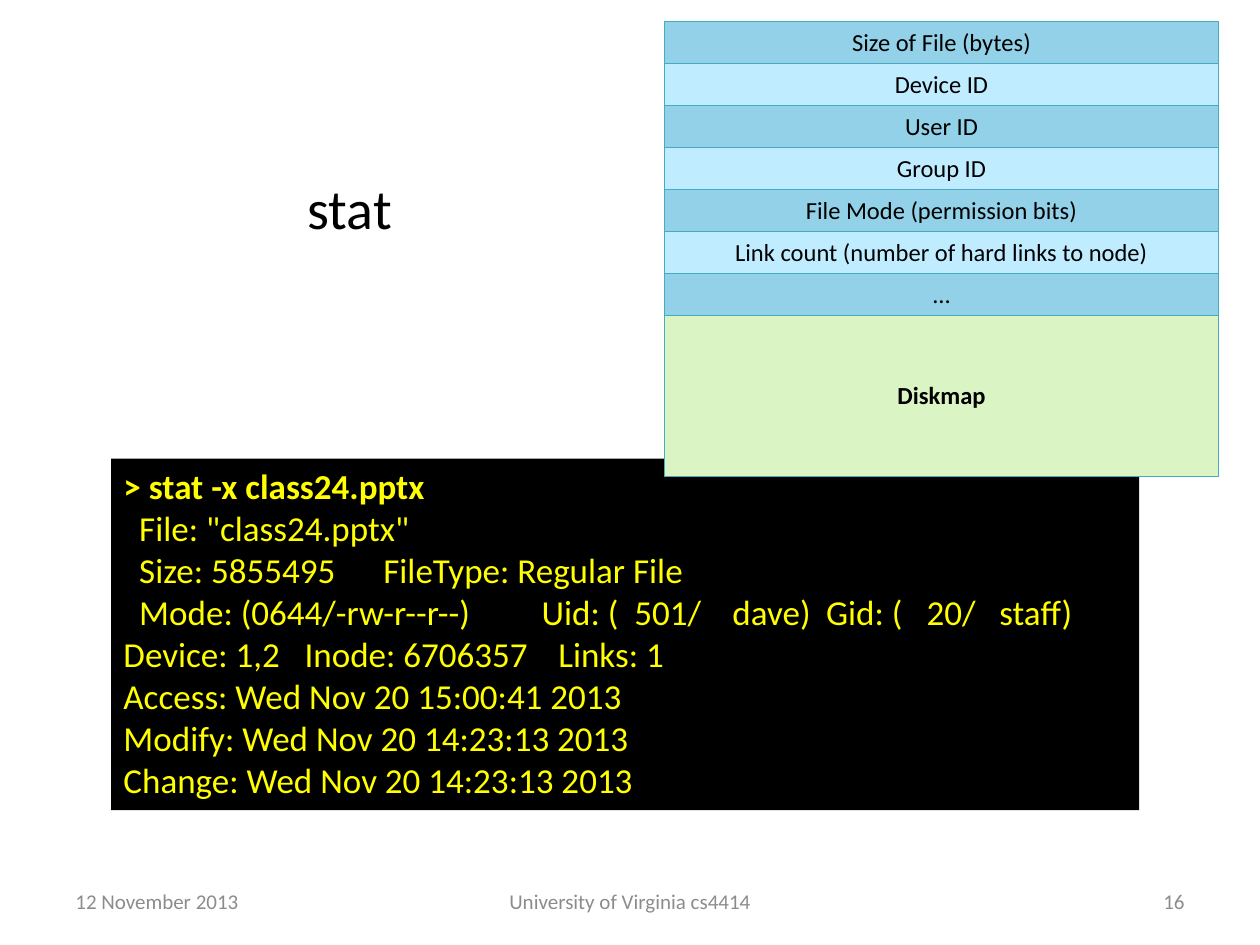
"""Build the slide that sets an inode's fields beside the output of stat."""
from dataclasses import dataclass

from lxml import etree
from pptx import Presentation
from pptx import util as u
from pptx.dml.color import RGBColor
from pptx.enum import text
from pptx.oxml import ns

Pt = u.Pt
ALIGN = text.PP_ALIGN
MIDDLE = text.MSO_ANCHOR.MIDDLE


@dataclass(frozen=True)
class Theme:
    font: str = "Calibri"
    ink: str = "000000"
    muted: str = "8C8C8C"
    terminal: str = "000000"
    output: str = "FFFF00"
    bands: tuple = ("92D1E8", "C0ECFF")
    diskmap: str = "DAF4C3"
    border: str = "46AAC5"
    title_size: int = 32
    output_size: int = 20
    field_size: int = 14
    footer_size: int = 12


THEME = Theme()

FIELDS = [
    "Size of File (bytes)",
    "Device ID",
    "User ID",
    "Group ID",
    "File Mode (permission bits)",
    "Link count (number of hard links to node)",
    "…",
]

INDENT = 9
STAT_OUTPUT = [
    ("> stat -x class24.pptx", ()),
    ("\tFile: \"class24.pptx\"", (INDENT,)),
    ("\tSize: 5855495\tFileType: Regular File", (INDENT, 148.5)),
    ("\tMode: (0644/-rw-r--r--)\tUid: (\t501/\tdave)\tGid: (\t20/\tstaff)",
     (INDENT, 239, 292, 348, 401.5, 459, 500.5)),
    ("Device: 1,2\tInode: 6706357\tLinks: 1", (103.5, 248.5)),
    ("Access: Wed Nov 20 15:00:41 2013", ()),
    ("Modify: Wed Nov 20 14:23:13 2013", ()),
    ("Change: Wed Nov 20 14:23:13 2013", ()),
]

FOOTERS = [
    ("12 November 2013", 36, 168, ALIGN.LEFT),
    ("University of Virginia cs4414", 246, 228, ALIGN.CENTER),
    ("16", 516, 168, ALIGN.RIGHT),
]


def apply(target, values):
    for name, value in values.items():
        setattr(target, name, value)


def write(paragraph, words, size, color, align=ALIGN.LEFT, bold=False):
    paragraph.alignment = align
    run = paragraph.add_run()
    run.text = words
    apply(run.font, {"name": THEME.font, "size": Pt(size), "bold": bold})
    run.font.color.rgb = RGBColor.from_string(color)


def paint(target, color):
    target.fill.solid()
    target.fill.fore_color.rgb = RGBColor.from_string(color)


def set_tab_stops(paragraph, stops):
    tabs = etree.SubElement(paragraph._p.get_or_add_pPr(), ns.qn("a:tabLst"))
    for stop in stops:
        etree.SubElement(tabs, ns.qn("a:tab"), pos=str(int(Pt(stop))), algn="l")


def add_border(cell):
    props = cell._tc.get_or_add_tcPr()
    for side in ("lnL", "lnR", "lnT", "lnB"):
        line = etree.SubElement(props, ns.qn(f"a:{side}"), w=str(int(Pt(0.75))))
        fill = etree.SubElement(line, ns.qn("a:solidFill"))
        etree.SubElement(fill, ns.qn("a:srgbClr"), val=THEME.border)


def fill_title(title):
    apply(title, {"left": Pt(168.5), "top": Pt(95.5), "width": Pt(64), "height": Pt(46)})
    apply(title.text_frame, {"word_wrap": False, "vertical_anchor": MIDDLE,
                             "auto_size": text.MSO_AUTO_SIZE.NONE})
    write(title.text_frame.paragraphs[0], "stat", THEME.title_size, THEME.ink)


def add_terminal(slide):
    terminal = slide.shapes.add_textbox(Pt(63.5), Pt(262), Pt(587.5), Pt(201))
    paint(terminal, THEME.terminal)
    terminal.text_frame.word_wrap = True
    for number, (words, stops) in enumerate(STAT_OUTPUT):
        frame = terminal.text_frame
        line = frame.add_paragraph() if number else frame.paragraphs[0]
        if stops:
            set_tab_stops(line, stops)
        write(line, words, THEME.output_size, THEME.output, bold=number == 0)


def fill_field(cell, words, color, bold=False):
    add_border(cell)
    paint(cell, color)
    apply(cell, {"vertical_anchor": MIDDLE, "margin_top": Pt(3), "margin_bottom": Pt(3)})
    write(cell.text_frame.paragraphs[0], words, THEME.field_size, THEME.ink,
          ALIGN.CENTER, bold)


def add_inode(slide):
    field_height, diskmap_height = 24, 92
    count = len(FIELDS)
    frame = slide.shapes.add_table(count + 1, 1, Pt(379.5), Pt(12.5), Pt(317),
                                   Pt(count * field_height + diskmap_height))
    inode = frame.table
    apply(inode, {"first_row": False, "horz_banding": False})
    for number, words in enumerate(FIELDS):
        inode.rows[number].height = Pt(field_height)
        fill_field(inode.cell(number, 0), words, THEME.bands[number % 2])
    inode.rows[count].height = Pt(diskmap_height)
    fill_field(inode.cell(count, 0), "Diskmap", THEME.diskmap, bold=True)


def add_footer(slide, words, left, width, align):
    footer = slide.shapes.add_textbox(Pt(left), Pt(500.5), Pt(width), Pt(29)).text_frame
    apply(footer, {"word_wrap": True, "vertical_anchor": MIDDLE})
    write(footer.paragraphs[0], words, THEME.footer_size, THEME.muted, align)


def main():
    deck = Presentation()
    apply(deck, {"slide_width": Pt(720), "slide_height": Pt(540)})
    slide = deck.slides.add_slide(deck.slide_layouts[5])
    fill_title(slide.shapes.title)
    add_terminal(slide)
    add_inode(slide)
    for footer in FOOTERS:
        add_footer(slide, *footer)
    deck.save("out.pptx")


if __name__ == "__main__":
    main()
